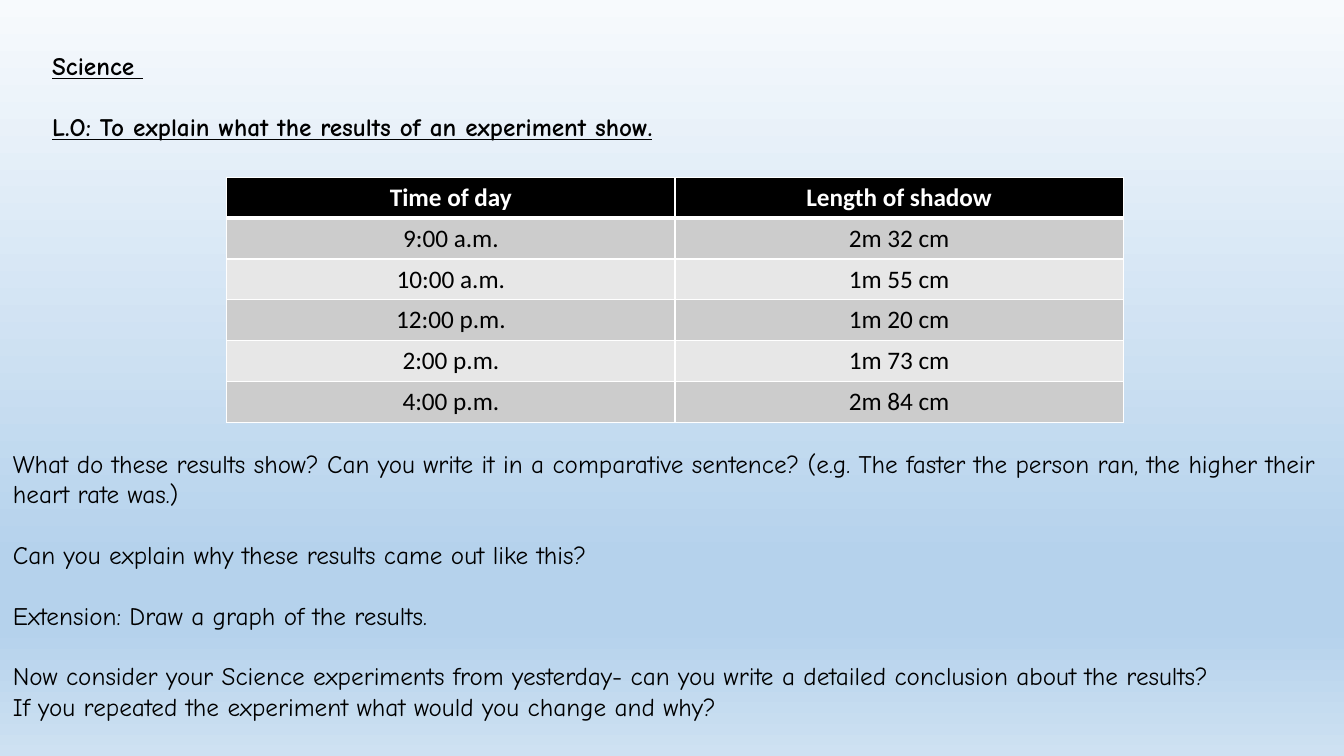
import pptx
import pptx.util
import pptx.dml.color
import pptx.enum.text
import pptx.oxml
import pptx.oxml.ns

Inches = pptx.util.Inches
Pt = pptx.util.Pt

HEADING = [("Science ", 0), ("L.O: To explain what the results of an experiment show.", 1)]
RESULTS = [
    ("Time of day", "Length of shadow"),
    ("9:00 a.m.", "2m 32 cm"),
    ("10:00 a.m.", "1m 55 cm"),
    ("12:00 p.m.", "1m 20 cm"),
    ("2:00 p.m.", "1m 73 cm"),
    ("4:00 p.m.", "2m 84 cm"),
]
QUESTIONS = [
    ("What do these results show? Can you write it in a comparative sentence? "
     "(e.g. The faster the person ran, the higher their heart rate was.)", 0),
    ("Can you explain why these results came out like this?", 1),
    ("Extension: Draw a graph of the results.", 1),
    ("Now consider your Science experiments from yesterday- can you write a "
     "detailed conclusion about the results?", 1),
    ("If you repeated the experiment what would you change and why?", 0),
]
COLOURS = {"ink": "000000", "white": "FFFFFF", "odd": "CCCCCC", "even": "E7E7E7",
           "sky_top": "F7FAFD", "sky_deep": "B5D2EC", "sky_foot": "CEE1F2"}
SKY_STOPS = [(0, "sky_top"), (74, "sky_deep"), (83, "sky_deep"), (100, "sky_foot")]
TEXT_SIZE = 18
BLANK_LINE = 21.7


def add_span(para, text, font, colour, bold=False, underline=False):
    """Add one styled run to a paragraph."""
    span = para.add_run()
    span.text = text
    span.font.name = font
    span.font.size = Pt(TEXT_SIZE)
    span.font.bold = bold
    span.font.underline = underline
    span.font.color.rgb = pptx.dml.color.RGBColor.from_string(COLOURS[colour])


def add_text(page, place, lines, wrap=True, strong=False):
    """Add a text box whose lines may follow a one-line gap."""
    box = page.shapes.add_textbox(*map(Inches, place))
    frame = box.text_frame
    frame.word_wrap = wrap
    frame.auto_size = pptx.enum.text.MSO_AUTO_SIZE.SHAPE_TO_FIT_TEXT
    for index, (text, gap) in enumerate(lines):
        para = frame.add_paragraph() if index else frame.paragraphs[0]
        para.space_before = Pt(BLANK_LINE * gap)
        add_span(para, text, "Comic Neue", "ink", strong, strong)


def set_borders(cell, widths):
    """Draw white borders on the left, right, top and bottom of a cell."""
    properties = cell._tc.get_or_add_tcPr()
    for index, (side, width) in enumerate(zip("LRTB", widths)):
        properties.insert(index, pptx.oxml.parse_xml(
            f'<a:ln{side} {pptx.oxml.ns.nsdecls("a")} w="{Pt(width)}"><a:solidFill>'
            f'<a:srgbClr val="{COLOURS["white"]}"/></a:solidFill></a:ln{side}>'))


def add_results(page, place):
    """Add the banded table of shadow lengths."""
    table = page.shapes.add_table(len(RESULTS), len(RESULTS[0]), *map(Inches, place)).table
    for row, values in enumerate(RESULTS):
        header = row == 0
        fill = "ink" if header else ("even", "odd")[row % 2]
        for column, text in enumerate(values):
            cell = table.cell(row, column)
            cell.fill.solid()
            cell.fill.fore_color.rgb = pptx.dml.color.RGBColor.from_string(COLOURS[fill])
            set_borders(cell, (1, 1, 3 if row == 1 else 1, 3 if header else 1))
            para = cell.text_frame.paragraphs[0]
            para.alignment = pptx.enum.text.PP_ALIGN.CENTER
            add_span(para, text, "Calibri", "white" if header else "ink", header)


def paint_sky(page):
    """Fill the background with a downward gradient."""
    fill = page.background.fill
    fill.gradient()
    fill.gradient_angle = 270
    stops = page._element.find(".//" + pptx.oxml.ns.qn("a:gsLst"))
    for stop in list(stops):
        stops.remove(stop)
    for percent, name in SKY_STOPS:
        stops.append(pptx.oxml.parse_xml(
            f'<a:gs {pptx.oxml.ns.nsdecls("a")} pos="{percent * 1000}">'
            f'<a:srgbClr val="{COLOURS[name]}"/></a:gs>'))


def main():
    """Build and save the science lesson slide."""
    deck = pptx.Presentation()
    deck.slide_width, deck.slide_height = Inches(13.33), Inches(7.5)
    page = deck.slides.add_slide(deck.slide_layouts[6])
    paint_sky(page)
    add_text(page, (0.42, 0.45, 7.26, 1.01), HEADING, wrap=False, strong=True)
    add_results(page, (2.25, 1.76, 8.89, 2.43))
    add_text(page, (0.03, 4.4, 13.33, 2.83), QUESTIONS)
    deck.save("out.pptx")


if __name__ == "__main__":
    main()
